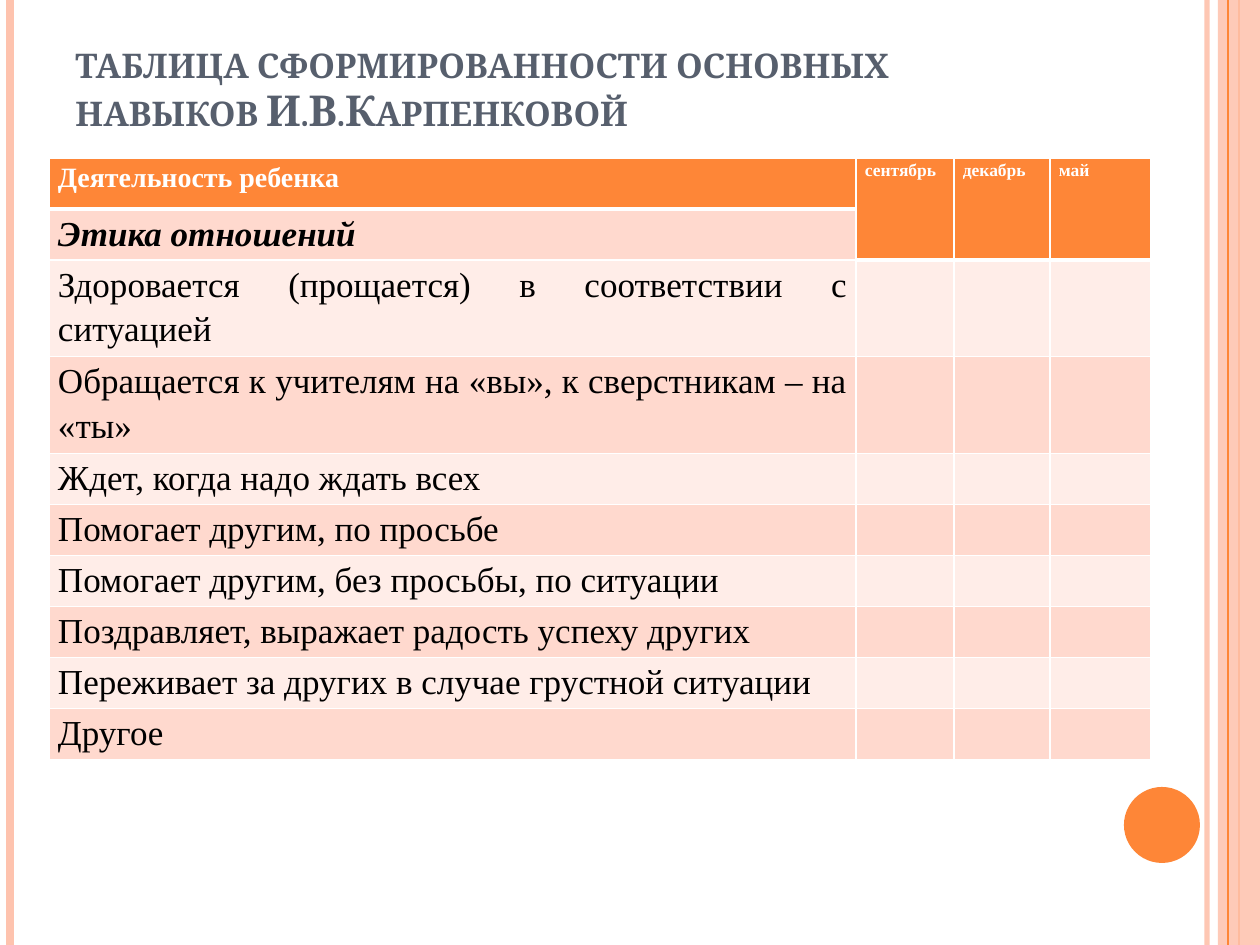
from pptx import Presentation
from pptx.dml.color import RGBColor
from pptx.enum.shapes import MSO_SHAPE, MSO_CONNECTOR
from pptx.enum.text import PP_ALIGN, MSO_ANCHOR
from pptx.oxml.ns import qn
from pptx.util import Pt
from lxml.etree import SubElement

TITLE = "таблица сформированности основных навыков И.В.Карпенковой"
HEAD = "Деятельность ребенка"
MONTHS = ["сентябрь", "декабрь", "май"]
GROUP = "Этика отношений"
SKILLS = [
    "Здоровается (прощается) в соответствии с ситуацией",
    "Обращается к учителям на «вы», к сверстникам – на «ты»",
    "Ждет, когда надо ждать всех",
    "Помогает другим, по просьбе",
    "Помогает другим, без просьбы, по ситуации",
    "Поздравляет, выражает радость успеху других",
    "Переживает за других в случае грустной ситуации",
    "Другое",
]
ORANGE, PEACH, WHITE = "FE8637", "FEC3AE", "FFFFFF"
BANDS = ["FFEDE8", "FFD9CE"]
WIDE, HIGH = 1260, 945
COLS = [807, 98, 96, 101]
ROWS = [51, 51, 89, 90] + [51] * 6
BACK = [(1207, PEACH, 3, 93), (10, PEACH, 4.5, 100), (1239, ORANGE, 1.5, 100)]
FRONT = [(1228, ORANGE, 0.75, 100)]


def px(n):
    return round(n * 914400 / 126)


def rgb(code):
    return RGBColor.from_string(code)


def fade(fill, pct):
    if pct < 100:
        tint = next(fill.iter(qn("a:srgbClr")))
        SubElement(tint, qn("a:alpha")).set("val", str(pct * 1000))


def stripe(x, color, width, pct):
    line = slide.shapes.add_connector(
        MSO_CONNECTOR.STRAIGHT, px(x), 0, px(x), px(HIGH))
    line.line.color.rgb = rgb(color)
    line.line.width = Pt(width)
    prop = line._element.spPr
    SubElement(prop, qn("a:effectLst"))
    fade(prop, pct)


def block(kind, box, color, pct=100):
    shape = slide.shapes.add_shape(kind, *map(px, box))
    shape.shadow.inherit = False
    shape.fill.solid()
    shape.fill.fore_color.rgb = rgb(color)
    shape.line.fill.background()
    fade(shape._element.spPr, pct)


def write(para, text, size, color, font, bold=False, italic=False):
    run = para.add_run()
    run.text = text
    face = run.font
    face.name, face.size, face.bold, face.italic = font, Pt(size), bold, italic
    face.color.rgb = rgb(color)
    return run


def edge(cell, side, width):
    line = SubElement(cell._tc.get_or_add_tcPr(), qn("a:ln" + side))
    line.set("w", str(Pt(width)))
    fill = SubElement(line, qn("a:solidFill"))
    SubElement(fill, qn("a:srgbClr")).set("val", WHITE)


def dress(cell, color, base):
    for side in "LR":
        edge(cell, side, 1)
    edge(cell, "B", base)
    cell.fill.solid()
    cell.fill.fore_color.rgb = rgb(color)
    cell.margin_left = cell.margin_right = px(9)
    cell.margin_top = cell.margin_bottom = 0


def label(cell, text, size, color, align=PP_ALIGN.JUSTIFY, **style):
    para = cell.text_frame.paragraphs[0]
    para.alignment = align
    para.line_spacing = 1.15
    write(para, text, size, color, "Times New Roman", **style)


deck = Presentation()
deck.slide_width, deck.slide_height = px(WIDE), px(HIGH)
slide = deck.slides.add_slide(deck.slide_layouts[6])

for item in BACK:
    stripe(*item)
block(MSO_SHAPE.RECTANGLE, (1218, 0, 42, HIGH), PEACH, 87)
for item in FRONT:
    stripe(*item)
block(MSO_SHAPE.OVAL, (1124, 787, 76, 76), ORANGE)

frame = slide.shapes.add_textbox(*map(px, (63, 38, 1029, 157))).text_frame
frame.word_wrap = True
frame.vertical_anchor = MSO_ANCHOR.TOP
frame.margin_top = px(3)
para = frame.paragraphs[0]
para.line_spacing = 0.93
run = write(para, TITLE, 24.3, "575F6D", "Cambria", bold=True)
run.font._element.set("cap", "small")

table = slide.shapes.add_table(
    len(ROWS), len(COLS), px(49), px(158), px(sum(COLS)), px(sum(ROWS))).table
for col, width in zip(table.columns, COLS):
    col.width = px(width)
for row, height in zip(table.rows, ROWS):
    row.height = px(height)
for r in range(len(ROWS)):
    for c in range(len(COLS)):
        top = r == 0 or (r == 1 and c > 0)
        dress(table.cell(r, c), ORANGE if top else BANDS[r % 2], 3 if top else 1)

label(table.cell(0, 0), HEAD, 16, WHITE, PP_ALIGN.LEFT, bold=True)
for c, month in enumerate(MONTHS, 1):
    table.cell(0, c).merge(table.cell(1, c))
    label(table.cell(0, c), month, 10, WHITE, bold=True)
label(table.cell(1, 0), GROUP, 20, "000000", bold=True, italic=True)
for r, skill in enumerate(SKILLS, 2):
    label(table.cell(r, 0), skill, 20, "000000")

deck.save("out.pptx")
